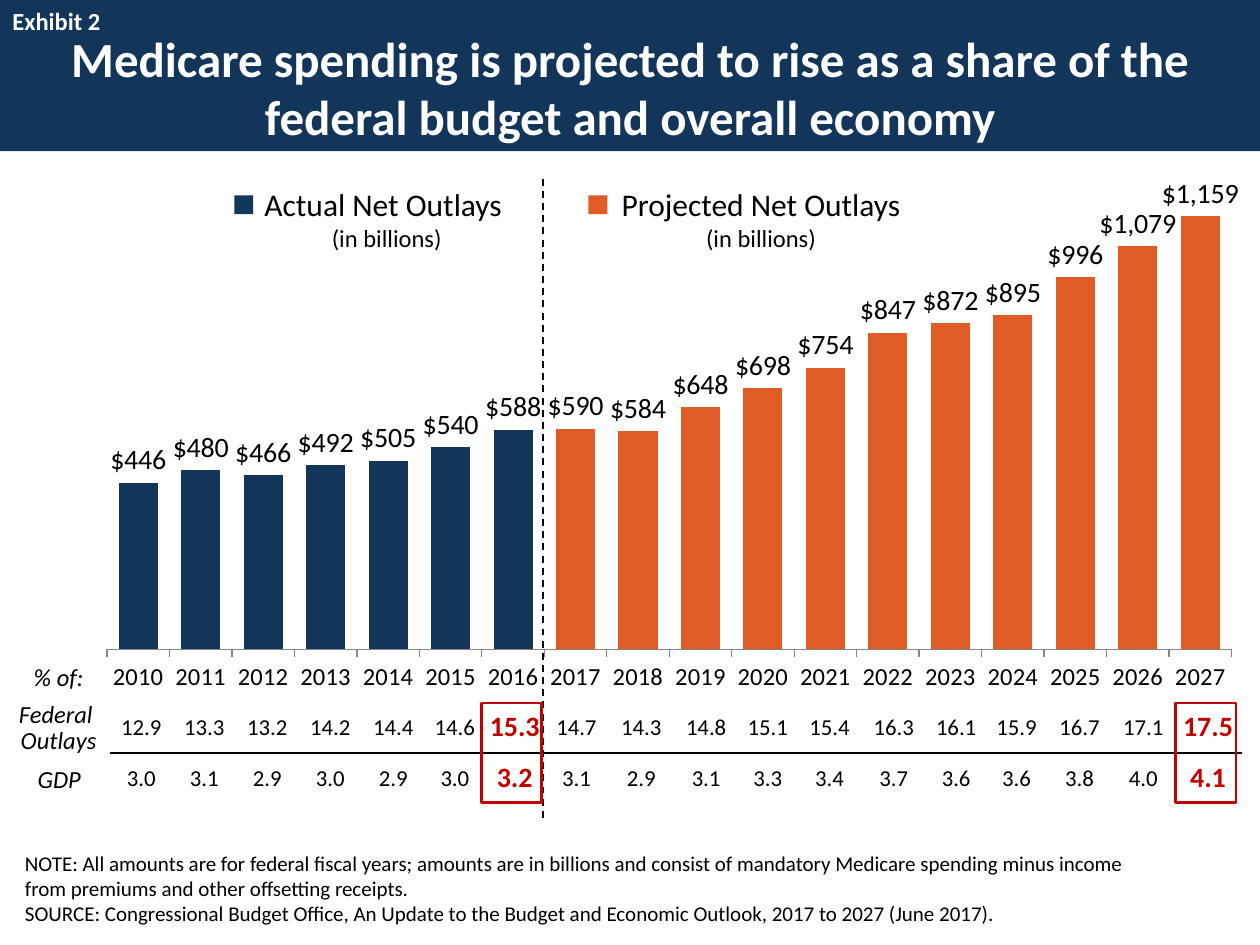
from lxml import etree
from pptx import Presentation
from pptx import util as u
from pptx.chart import data
from pptx.dml.color import RGBColor
from pptx.enum import chart as ch, dml, shapes, text
from pptx.oxml import ns, parse_xml

NAVY = RGBColor(0x13, 0x35, 0x59)
ORANGE = RGBColor(0xE0, 0x5C, 0x26)
RED = RGBColor(0xC0, 0x00, 0x00)
BLACK = RGBColor(0x00, 0x00, 0x00)
WHITE = RGBColor(0xFF, 0xFF, 0xFF)
GREY = RGBColor(0x86, 0x86, 0x86)
FONT = "Calibri"
COLS, ROWS = 100, 75
CENTER, LEFT = text.PP_ALIGN.CENTER, text.PP_ALIGN.LEFT
TOP, MIDDLE, BOTTOM = text.MSO_ANCHOR.TOP, text.MSO_ANCHOR.MIDDLE, text.MSO_ANCHOR.BOTTOM

prs = Presentation()
prs.slide_width, prs.slide_height = u.Inches(10), u.Inches(7.5)
s = prs.slides.add_slide(prs.slide_layouts[6])


def grid(*cells):
    units = (prs.slide_width / COLS, prs.slide_height / ROWS)
    return [u.Emu(round(c * units[i % 2])) for i, c in enumerate(cells)]


def add_text(tf, lines, color=BLACK, align=CENTER, anchor=TOP, bold=False, italic=False, spacing=None, after=0):
    tf.word_wrap = True
    tf.vertical_anchor = anchor
    for i, (line, size) in enumerate(lines):
        p = tf.paragraphs[0] if i == 0 else tf.add_paragraph()
        p.alignment = align
        if spacing:
            p.line_spacing = spacing
        if i < len(lines) - 1:
            p.space_after = u.Pt(after)
        for j, part in enumerate(line.split("\n")):
            if j:
                p.add_line_break()
            r = p.add_run()
            r.text = part
            r.font.name, r.font.size, r.font.color.rgb = FONT, u.Pt(size), color
            r.font.bold, r.font.italic = bold, italic


divider = s.shapes.add_connector(shapes.MSO_CONNECTOR.STRAIGHT, *grid(43.1, 14.2, 43.1, 65.2))
divider.line.color.rgb, divider.line.width = BLACK, u.Pt(1)
divider.line.dash_style = dml.MSO_LINE.DASH
etree.SubElement(divider._element.spPr, ns.qn("a:effectLst"))

outlays = [446, 480, 466, 492, 505, 540, 588, 590, 584, 648, 698, 754, 847, 872, 895, 996, 1079, 1159]
ACTUAL_YEARS = 7
cd = data.CategoryChartData(number_format='"$"#,##0')
cd.categories = [str(2010 + i) for i in range(len(outlays))]
cd.add_series("Series 1", outlays)
chart = s.shapes.add_chart(ch.XL_CHART_TYPE.COLUMN_CLUSTERED, *grid(7.2, 7.5, 92.3, 48.1), cd).chart
chart.has_legend = chart.has_title = False
chart.font.name, chart.font.size, chart.font.color.rgb = FONT, u.Pt(18), BLACK
chart.value_axis.visible = False
chart.value_axis.has_major_gridlines = False
chart.value_axis.minimum_scale, chart.value_axis.maximum_scale = 0, 1400
axis = chart.category_axis
axis.major_tick_mark = ch.XL_TICK_MARK.OUTSIDE
axis.tick_labels.font.size = u.Pt(14)
axis.format.line.color.rgb = GREY

plot = chart.plots[0]
plot.gap_width, plot.vary_by_categories = 60, False
bars = plot.series[0]
bars.format.fill.solid()
bars.format.fill.fore_color.rgb = NAVY
for i in range(ACTUAL_YEARS, len(outlays)):
    fill = bars.points[i].format.fill
    fill.solid()
    fill.fore_color.rgb = ORANGE
plot.has_data_labels = True
labels = plot.data_labels
labels.show_value = True
labels.number_format, labels.number_format_is_linked = '"$"#,##0', False
labels.position = ch.XL_LABEL_POSITION.OUTSIDE_END
labels.font.size = u.Pt(16)

area = chart._chartSpace.chart.plotArea
for old in area.findall(ns.qn("c:layout")):
    area.remove(old)
places = {"x": 0.01, "y": 0.05, "w": 0.97, "h": 0.86}
places.update(x=0.014, y=0.052, w=0.967, h=0.864)
area.insert(0, parse_xml(
    f'<c:layout {ns.nsdecls("c")}><c:manualLayout><c:layoutTarget val="inner"/>'
    '<c:xMode val="edge"/><c:yMode val="edge"/>'
    + "".join(f'<c:{k} val="{v}"/>' for k, v in places.items())
    + "</c:manualLayout></c:layout>"))

notes = [
    "NOTE: All amounts are for federal fiscal years; amounts are in billions and consist of mandatory Medicare "
    "spending minus income from premiums and other offsetting receipts.",
    "SOURCE: Congressional Budget Office, An Update to the Budget and Economic Outlook, 2017 to 2027 (June 2017).",
]
tf = s.shapes.add_textbox(*grid(1, 68, 91, 6)).text_frame
add_text(tf, [(n, 12) for n in notes], align=LEFT, anchor=BOTTOM)

row_heads = [
    ((-0.3, 52.3, 9.9, 8.2), ["% of:", "Federal \nOutlays"]),
    ((0.3, 60.4, 8.8, 3.1), ["GDP"]),
]
for at, lines in row_heads:
    tf = s.shapes.add_textbox(*grid(*at)).text_frame
    add_text(tf, [(t, 14) for t in lines], italic=True, spacing=0.9, after=6)

legend = [
    ("Actual Net Outlays ", 19.7, 22, 18.6, NAVY),
    ("Projected Net Outlays", 47.9, 25, 46.7, ORANGE),
]
for name, left, width, key_left, color in legend:
    tf = s.shapes.add_textbox(*grid(left, 14.2, width, 6.4)).text_frame
    add_text(tf, [(name, 18), ("(in billions)", 14)])
    key = s.shapes.add_shape(shapes.MSO_SHAPE.RECTANGLE, *grid(key_left, 15.5, 1.5, 1.5))
    key.shadow.inherit = False
    key.fill.solid()
    key.fill.fore_color.rgb = color
    key.line.fill.background()

shares = [
    "12.9 13.3 13.2 14.2 14.4 14.6 15.3 14.7 14.3 14.8 15.1 15.4 16.3 16.1 15.9 16.7 17.1 17.5".split(),
    "3.0 3.1 2.9 3.0 2.9 3.0 3.2 3.1 2.9 3.1 3.3 3.4 3.7 3.6 3.6 3.8 4.0 4.1".split(),
]
widths = [5, 5, 5, 5, 5, 4.8, 4.7, 5.1, 5.2, 5.1, 4.7, 5.1, 5.1, 4.8, 4.8, 5.2, 4.9, 5.4]
table = s.shapes.add_table(2, len(widths), *grid(8.7, 55.7, 89.6, 8.1)).table
table.first_row = table.horz_banding = False
table._tbl.tblPr.find(ns.qn("a:tableStyleId")).text = "{2D5ABB26-0587-4C30-8999-92F81FD0307C}"
for c, width in enumerate(widths):
    table.columns[c].width = grid(width)[0]
for r, (values, edge) in enumerate(zip(shares, ("lnB", "lnT"))):
    table.rows[r].height = grid(0, 4.05)[1]
    for c, value in enumerate(values):
        cell = table.cell(r, c)
        cell.margin_left = cell.margin_right = 0
        cell.vertical_anchor = MIDDLE
        cell.fill.background()
        key_year = c in (ACTUAL_YEARS - 1, len(values) - 1)
        add_text(cell.text_frame, [(value, 16 if key_year else 13)], RED if key_year else BLACK, bold=key_year)
        cell.vertical_anchor = MIDDLE
        cell._tc.get_or_add_tcPr().insert(0, parse_xml(
            f'<a:{edge} {ns.nsdecls("a")} w="12700"><a:solidFill><a:srgbClr val="{BLACK}"/></a:solidFill></a:{edge}>'))

band = s.shapes.add_shape(shapes.MSO_SHAPE.RECTANGLE, *grid(0, 0, COLS, 12))
band.shadow.inherit = False
band.fill.solid()
band.fill.fore_color.rgb = NAVY
band.line.fill.background()
headings = [
    ((1, 1.9, 98, 10), "Medicare spending is projected to rise as a share of the federal budget and overall economy",
     28, CENTER, MIDDLE),
    ((0, 0, 10, 3.4), "Exhibit 2", 14, LEFT, TOP),
]
for at, line, size, align, anchor in headings:
    tf = s.shapes.add_textbox(*grid(*at)).text_frame
    add_text(tf, [(line, size)], WHITE, align, anchor, bold=True)

for left in (38.2, 93.3):
    frame = s.shapes.add_shape(shapes.MSO_SHAPE.RECTANGLE, *grid(left, 55.8, 4.8, 7.9))
    frame.shadow.inherit = False
    frame.fill.background()
    frame.line.color.rgb, frame.line.width = RED, u.Pt(1.5)

prs.save("out.pptx")
